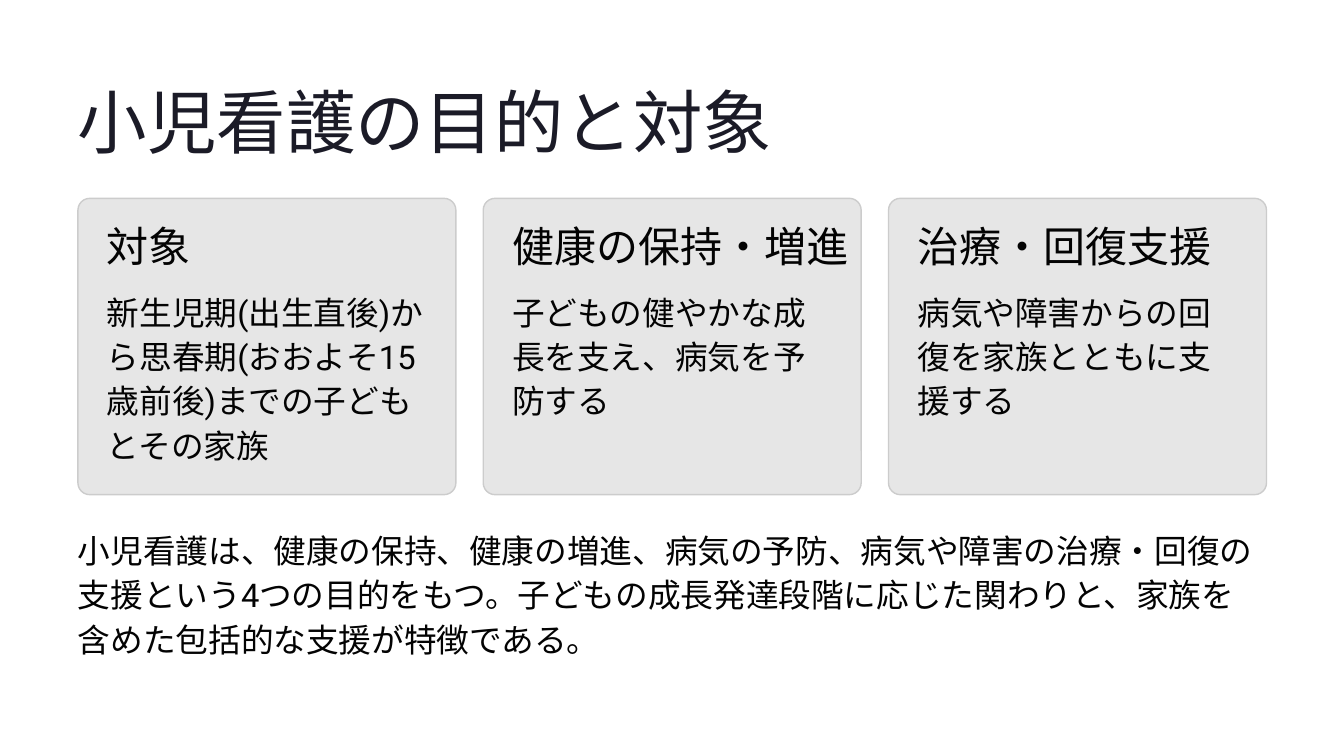
from pptx import Presentation
from pptx.dml.color import RGBColor
from pptx.enum.shapes import MSO_SHAPE
from pptx.util import Pt

ROUNDED = MSO_SHAPE.ROUNDED_RECTANGLE
HEADING_FONT, BODY_FONT = "Inter", "Roboto"
TITLE_COLOR, TEXT_COLOR = "1B1B27", "030303"
CARD_FILL, CARD_LINE = "E6E6E6", "CCCCCC"
MARGIN, CONTENT_WIDTH = 66.8, 1018.8
CARD_GAP, CARD_PADDING = 23.4, 24.8

TITLE = "小児看護の目的と対象"
CARDS = [
    ("対象", "新生児期(出生直後)から思春期(おおよそ15歳前後)までの子どもとその家族"),
    ("健康の保持・増進", "子どもの健やかな成長を支え、病気を予防する"),
    ("治療・回復支援", "病気や障害からの回復を家族とともに支援する"),
]
SUMMARY = (
    "小児看護は、健康の保持、健康の増進、病気の予防、病気や障害の治療・回復の"
    "支援という4つの目的をもつ。子どもの成長発達段階に応じた関わりと、家族を"
    "含めた包括的な支援が特徴である。"
)


def color(value):
    return RGBColor.from_string(value)


def add_text(page, box, text, font, size, spacing, hue=TEXT_COLOR, wrap=True):
    frame = page.shapes.add_textbox(*map(Pt, box)).text_frame
    frame.margin_left = frame.margin_right = 0
    frame.margin_top = frame.margin_bottom = 0
    frame.word_wrap = wrap
    para = frame.paragraphs[0]
    para.text = text
    para.line_spacing = Pt(spacing)
    para.font.name = font
    para.font.size = Pt(size)
    para.font.color.rgb = color(hue)


def add_title(page, box):
    add_text(page, box, TITLE, HEADING_FONT, 59.5, 74, TITLE_COLOR, wrap=False)


def add_card(page, box, heading, body):
    left, top, width, height = box
    card = page.shapes.add_shape(ROUNDED, *map(Pt, box))
    card.adjustments[0] = 0.04
    card.shadow.inherit = False
    card.fill.solid()
    card.fill.fore_color.rgb = color(CARD_FILL)
    card.line.color.rgb = color(CARD_LINE)
    card.line.width = Pt(1.2)
    inner_left = left + CARD_PADDING
    heading_width = width - CARD_PADDING
    body_width = width - 2 * CARD_PADDING
    add_text(page, (inner_left, top + 25, heading_width, 37), heading,
             HEADING_FONT, 36, 37, wrap=False)
    add_text(page, (inner_left, top + 76.4, body_width, height - 101.4), body,
             BODY_FONT, 28, 38)


def add_cards(page, box):
    left, top, width, height = box
    card_width = (width - CARD_GAP * (len(CARDS) - 1)) / len(CARDS)
    for index, (heading, body) in enumerate(CARDS):
        card_left = left + index * (card_width + CARD_GAP)
        add_card(page, (card_left, top, card_width, height), heading, body)


def add_summary(page, box):
    add_text(page, box, SUMMARY, BODY_FONT, 28, 38)


def main():
    deck = Presentation()
    deck.slide_width, deck.slide_height = Pt(1152), Pt(648)
    page = deck.slides.add_slide(deck.slide_layouts[6])
    add_title(page, (MARGIN, 65.5, 595.4, 74))
    add_cards(page, (MARGIN, 170, CONTENT_WIDTH, 254))
    add_summary(page, (MARGIN, 450.7, CONTENT_WIDTH, 114))
    deck.save("out.pptx")


if __name__ == "__main__":
    main()
